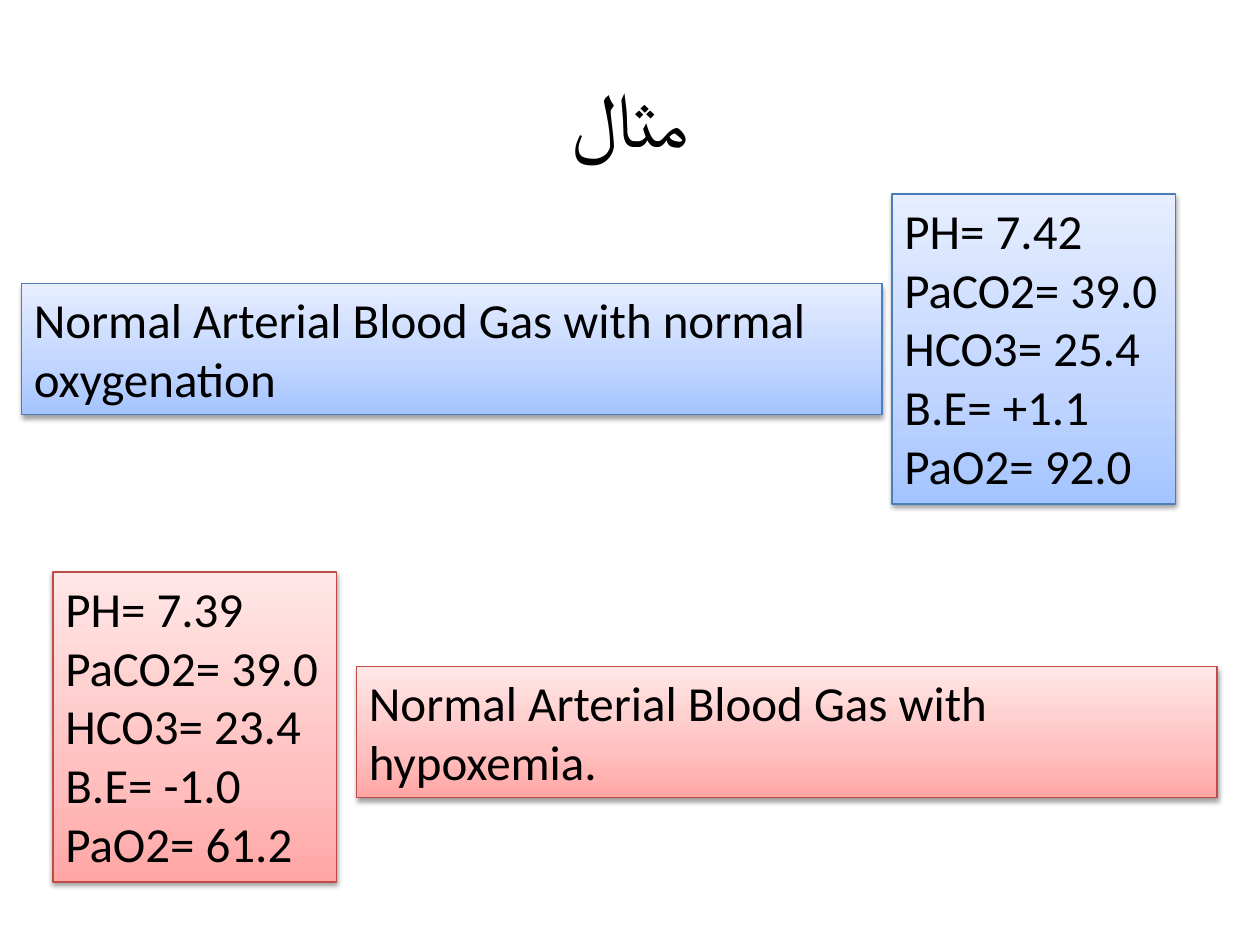
from collections import namedtuple
from copy import deepcopy

from lxml import etree
from pptx import Presentation
from pptx import util as u
from pptx.dml.color import RGBColor
from pptx.enum import shapes, text
from pptx.oxml import ns

BLACK = RGBColor(0x00, 0x00, 0x00)
FONT = "Calibri"
READINGS_WIDTH, READINGS_HEIGHT = u.Inches(2.25), u.Inches(2.46)
FINDING_WIDTH, FINDING_HEIGHT = u.Inches(6.83), u.Inches(1.04)

Area = namedtuple("Area", "left top width height")
Palette = namedtuple("Palette", "line stops")

BLUE = Palette(
    RGBColor(0x4B, 0x7E, 0xBC),
    [
        (0, RGBColor(0xA4, 0xC4, 0xFF)),
        (0.35, RGBColor(0xBF, 0xD4, 0xFF)),
        (1, RGBColor(0xE6, 0xEE, 0xFF)),
    ],
)
RED = Palette(
    RGBColor(0xBF, 0x4C, 0x48),
    [
        (0, RGBColor(0xFF, 0xA6, 0xA5)),
        (0.35, RGBColor(0xFF, 0xC0, 0xBF)),
        (1, RGBColor(0xFF, 0xE7, 0xE7)),
    ],
)


def write_lines(frame, lines, size=28, align=text.PP_ALIGN.LEFT, color=BLACK):
    for index, line in enumerate(lines):
        para = frame.paragraphs[0] if index == 0 else frame.add_paragraph()
        para.alignment = align
        span = para.add_run()
        span.text = line
        span.font.name = FONT
        span.font.size = u.Pt(size)
        span.font.color.rgb = color


def fill_gradient(box, stops):
    box.fill.gradient()
    box.fill.gradient_angle = 90
    stop_list = box._element.spPr.find(".//" + ns.qn("a:gsLst"))
    stop_list.append(deepcopy(stop_list[-1]))
    for stop, (position, color) in zip(box.fill.gradient_stops, stops):
        stop.position = position
        stop.color.rgb = color


def add_shadow(box):
    box.shadow.inherit = False
    effects = box._element.spPr.find(ns.qn("a:effectLst"))
    shadow = etree.SubElement(
        effects,
        ns.qn("a:outerShdw"),
        blurRad=str(u.Pt(3.1)),
        dist=str(u.Pt(1.6)),
        dir="5400000",
        rotWithShape="0",
    )
    color = etree.SubElement(shadow, ns.qn("a:srgbClr"), val=str(BLACK))
    etree.SubElement(color, ns.qn("a:alpha"), val="38000")


def add_panel(slide, area, lines, palette):
    box = slide.shapes.add_shape(shapes.MSO_SHAPE.RECTANGLE, *area)
    fill_gradient(box, palette.stops)
    box.line.color.rgb = palette.line
    box.line.width = u.Pt(0.75)
    add_shadow(box)
    frame = box.text_frame
    frame.word_wrap = True
    frame.auto_size = text.MSO_AUTO_SIZE.SHAPE_TO_FIT_TEXT
    frame.vertical_anchor = text.MSO_ANCHOR.TOP
    write_lines(frame, lines)


def add_case(slide, area, readings, finding, palette, finding_drop, readings_first):
    right = area.left + area.width
    if readings_first:
        readings_left, finding_left = area.left, right - FINDING_WIDTH
    else:
        readings_left, finding_left = right - READINGS_WIDTH, area.left
    add_panel(
        slide,
        Area(readings_left, area.top, READINGS_WIDTH, READINGS_HEIGHT),
        readings,
        palette,
    )
    add_panel(
        slide,
        Area(finding_left, area.top + finding_drop, FINDING_WIDTH, FINDING_HEIGHT),
        [finding],
        palette,
    )


def add_title(slide, area, words):
    title = slide.shapes.title
    title.left, title.top, title.width, title.height = area
    title.text_frame.vertical_anchor = text.MSO_ANCHOR.MIDDLE
    write_lines(title.text_frame, [words], size=44, align=text.PP_ALIGN.CENTER)


def main():
    deck = Presentation()
    deck.slide_width, deck.slide_height = u.Inches(10), u.Inches(7.5)
    slide = deck.slides.add_slide(deck.slide_layouts[5])
    add_title(
        slide, Area(u.Inches(0.5), u.Inches(0.3), u.Inches(9), u.Inches(1.25)), "مثال"
    )
    add_case(
        slide,
        Area(u.Inches(0.42), u.Inches(4.54), u.Inches(9.24), READINGS_HEIGHT),
        ["PH= 7.39", "PaCO2= 39.0", "HCO3= 23.4", "B.E= -1.0", "PaO2= 61.2"],
        "Normal Arterial Blood Gas with hypoxemia.",
        RED,
        finding_drop=u.Inches(0.75),
        readings_first=True,
    )
    add_case(
        slide,
        Area(u.Inches(0.17), u.Inches(1.54), u.Inches(9.16), READINGS_HEIGHT),
        ["PH= 7.42", "PaCO2= 39.0", "HCO3= 25.4", "B.E= +1.1", "PaO2= 92.0"],
        "Normal Arterial Blood Gas with normal oxygenation",
        BLUE,
        finding_drop=u.Inches(0.71),
        readings_first=False,
    )
    deck.save("out.pptx")


if __name__ == "__main__":
    main()
